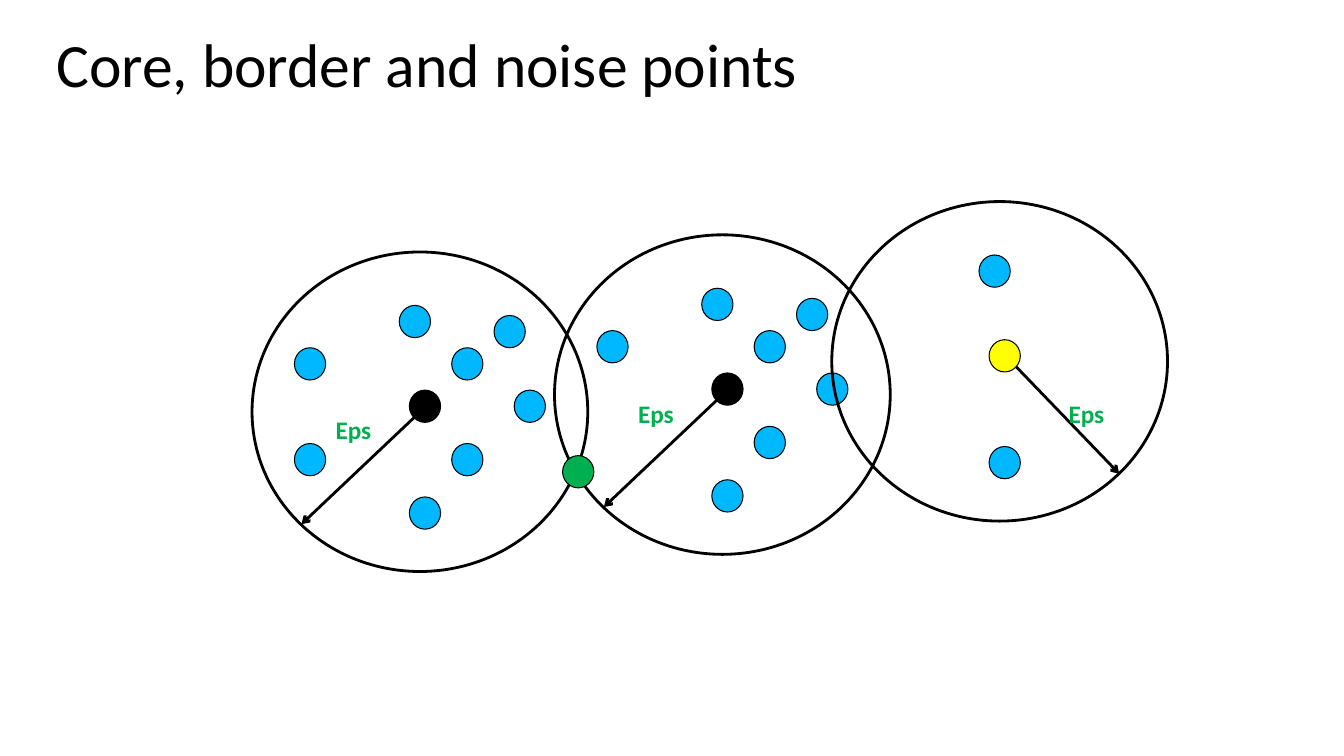
from lxml import etree
from pptx import Presentation
from pptx.dml.color import RGBColor
from pptx.enum.shapes import MSO_CONNECTOR, MSO_SHAPE
from pptx.enum.text import MSO_ANCHOR
from pptx.oxml.ns import qn
from pptx.util import Inches, Pt

OVAL = MSO_SHAPE.OVAL
STRAIGHT = MSO_CONNECTOR.STRAIGHT
MIDDLE = MSO_ANCHOR.MIDDLE
TOP = MSO_ANCHOR.TOP

FONT = "Calibri"
COLORS = {
    "ink": "000000",
    "core": "000000",
    "neighbor": "00B8FF",
    "border": "00B050",
    "noise": "FFFF00",
    "label": "00B050",
}

# Sizes and offsets in inches, measured from the corner of a neighborhood
CIRCLE_SIZE = (3.33, 3.17)
POINT_SIZE = (0.31, 0.32)
LABEL_SIZE = (1.04, 0.4)
CENTER = (1.56, 1.37)
ABOVE, BELOW = (1.46, 0.53), (1.56, 2.43)
DENSE = [(2.4, 0.63), (1.98, 1.9), (0.42, 0.95), ABOVE, BELOW,
         (2.6, 1.37), (1.98, 0.95)]
LOWER_LEFT = (0.42, 1.9)
BORDER_SPOT = (0.08, 2.19)
LEFT_ARROW = ((1.61, 1.64), (0.49, 2.7))
RIGHT_ARROW = ((1.83, 1.64), (2.85, 2.7))

# Corner, center kind, neighbors, border points, radius arrow, label corner
NEIGHBORHOODS = [
    ((2.5, 2.5), "core", DENSE + [LOWER_LEFT], [], LEFT_ARROW, (0.73, 1.58)),
    ((5.5, 2.33), "core", DENSE, [BORDER_SPOT], LEFT_ARROW, (0.73, 1.59)),
    ((8.25, 2), "noise", [ABOVE, BELOW], [], RIGHT_ARROW, (2.25, 1.92)),
]


def color(name):
    return RGBColor.from_string(COLORS[name])


def shift(corner, offset):
    return corner[0] + offset[0], corner[1] + offset[1]


def add_text(page, corner, size, text, points, color_name, bold, spacing, anchor):
    box = page.shapes.add_textbox(*map(Inches, (*corner, *size)))
    frame = box.text_frame
    frame.word_wrap = True
    frame.vertical_anchor = anchor
    frame.text = text
    para = frame.paragraphs[0]
    para.line_spacing = spacing
    span = para.runs[0]
    span.font.name = FONT
    span.font.size = Pt(points)
    span.font.bold = bold
    span.font.color.rgb = color(color_name)


def add_oval(page, corner, size, line_width, fill=None):
    oval = page.shapes.add_shape(OVAL, *map(Inches, (*corner, *size)))
    oval.shadow.inherit = False
    if fill:
        oval.fill.solid()
        oval.fill.fore_color.rgb = color(fill)
    else:
        oval.fill.background()
    oval.line.color.rgb = color("ink")
    oval.line.width = Pt(line_width)


def add_arrow(page, start, end):
    arrow = page.shapes.add_connector(STRAIGHT, *map(Inches, (*start, *end)))
    arrow.line.color.rgb = color("ink")
    arrow.line.width = Pt(2)
    etree.SubElement(arrow.line._get_or_add_ln(), qn("a:tailEnd"), type="arrow")
    etree.SubElement(arrow._element.spPr, qn("a:effectLst"))


def add_neighborhood(page, corner, kind, neighbors, borders, radius, label):
    # Eps circle with its points
    add_oval(page, corner, CIRCLE_SIZE, 2)
    marks = [(kind, CENTER)]
    marks += [("neighbor", spot) for spot in neighbors]
    marks += [("border", spot) for spot in borders]
    for fill, spot in marks:
        add_oval(page, shift(corner, spot), POINT_SIZE, 0.75, fill)

    # Radius and its label
    start, end = radius
    add_arrow(page, shift(corner, start), shift(corner, end))
    add_text(page, shift(corner, label), LABEL_SIZE, "Eps", 18, "label",
             True, 0.98, TOP)


def main():
    deck = Presentation()
    deck.slide_width, deck.slide_height = Inches(13.33), Inches(7.5)
    page = deck.slides.add_slide(deck.slide_layouts[6])
    add_text(page, (0.46, 0.15), (10.23, 1.04), "Core, border and noise points",
             44, "ink", False, 0.9, MIDDLE)
    for neighborhood in NEIGHBORHOODS:
        add_neighborhood(page, *neighborhood)
    deck.save("out.pptx")


if __name__ == "__main__":
    main()
